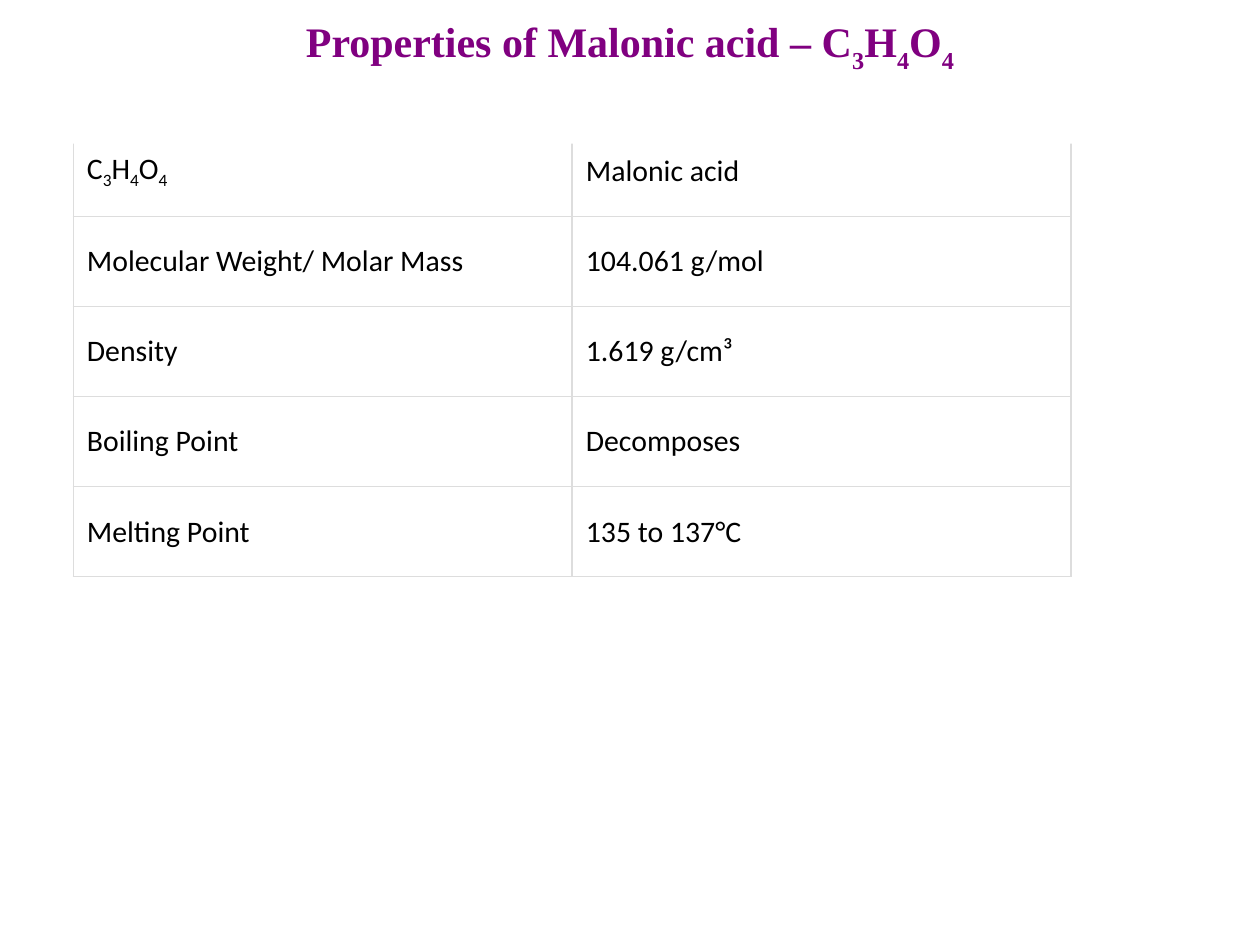
import pptx
import pptx.dml.color
import pptx.enum.text
import pptx.oxml
import pptx.oxml.ns
import pptx.util

WIDTH, HEIGHT = 10, 7.5
TITLE_FORMAT = {"name": "Times New Roman", "size": pptx.util.Pt(24), "bold": True}
CELL_FORMAT = {"name": "Calibri", "size": pptx.util.Pt(17), "bold": False}
FORMULA = [("C", False), ("3", True), ("H", False), ("4", True), ("O", False), ("4", True)]
PROPERTIES = [
    (FORMULA, "Malonic acid"),
    ("Molecular Weight/ Molar Mass", "104.061 g/mol"),
    ("Density", "1.619 g/cm³"),
    ("Boiling Point", "Decomposes"),
    ("Melting Point", "135 to 137°C"),
]


def color(value):
    return pptx.dml.color.RGBColor.from_string(value)


def inches(*values):
    return [pptx.util.Inches(value) for value in values]


def set_values(target, values):
    for name, value in values.items():
        setattr(target, name, value)


def fill(target, value):
    target.fill.solid()
    target.fill.fore_color.rgb = color(value)


class SlideBuilder:
    background = "FFFFFF"
    title_color = "800080"
    text_color = "000000"
    border_color = "DDDDDD"

    def __init__(self, presentation):
        self.slide = presentation.slides.add_slide(presentation.slide_layouts[5])
        fill(self.slide.background, self.background)

    def box(self, left, top, width, height):
        return inches(left * WIDTH, top * HEIGHT, width * WIDTH, height * HEIGHT)

    def add_text(self, paragraph, pieces, values, text_color, baseline):
        if isinstance(pieces, str):
            pieces = [(pieces, False)]
        for text, lowered in pieces:
            run = paragraph.add_run()
            run.text = text
            set_values(run.font, values)
            run.font.color.rgb = color(text_color)
            if lowered:
                run.font._element.set("baseline", str(baseline * 1000))

    def title(self, pieces, *place):
        shape = self.slide.shapes.title
        shape.left, shape.top, shape.width, shape.height = self.box(*place)
        fill(shape, self.background)
        set_values(shape.text_frame, {
            "word_wrap": True,
            "auto_size": pptx.enum.text.MSO_AUTO_SIZE.NONE,
            "vertical_anchor": pptx.enum.text.MSO_ANCHOR.TOP,
            "margin_top": pptx.util.Inches(0.12),
        })
        paragraph = shape.text_frame.paragraphs[0]
        paragraph.alignment = pptx.enum.text.PP_ALIGN.CENTER
        self.add_text(paragraph, pieces, TITLE_FORMAT, self.title_color, -30)
        shape.element.getparent().append(shape.element)

    def borders(self, cell):
        properties = cell._tc.get_or_add_tcPr()
        for index, side in enumerate(("lnL", "lnR", "lnT", "lnB")):
            line = pptx.oxml.parse_xml(
                f'<a:{side} {pptx.oxml.ns.nsdecls("a")} w="{pptx.util.Pt(0.75)}">'
                f'<a:solidFill><a:srgbClr val="{self.border_color}"/></a:solidFill></a:{side}>'
            )
            properties.insert(index, line)

    def table(self, rows, *place):
        frame = self.slide.shapes.add_table(len(rows), len(rows[0]), *self.box(*place))
        table = frame.table
        set_values(table, {"first_row": False, "horz_banding": False})
        side, edge = inches(0.11, 0.08)
        cell_values = {
            "margin_left": side, "margin_right": side,
            "margin_top": edge, "margin_bottom": edge,
            "vertical_anchor": pptx.enum.text.MSO_ANCHOR.MIDDLE,
        }
        for row, contents in enumerate(rows):
            for column, content in enumerate(contents):
                cell = table.cell(row, column)
                set_values(cell, cell_values)
                fill(cell, self.background)
                self.borders(cell)
                paragraph = cell.text_frame.paragraphs[0]
                self.add_text(paragraph, content, CELL_FORMAT, self.text_color, -25)


def main():
    presentation = pptx.Presentation()
    presentation.slide_width, presentation.slide_height = inches(WIDTH, HEIGHT)
    builder = SlideBuilder(presentation)
    builder.table(PROPERTIES, 0.058, 1 / HEIGHT, 0.792, 3.58 / HEIGHT)
    builder.title([("Properties of Malonic acid – ", False)] + FORMULA, 0, 0, 1, 1.14 / HEIGHT)
    presentation.save("out.pptx")


if __name__ == "__main__":
    main()
